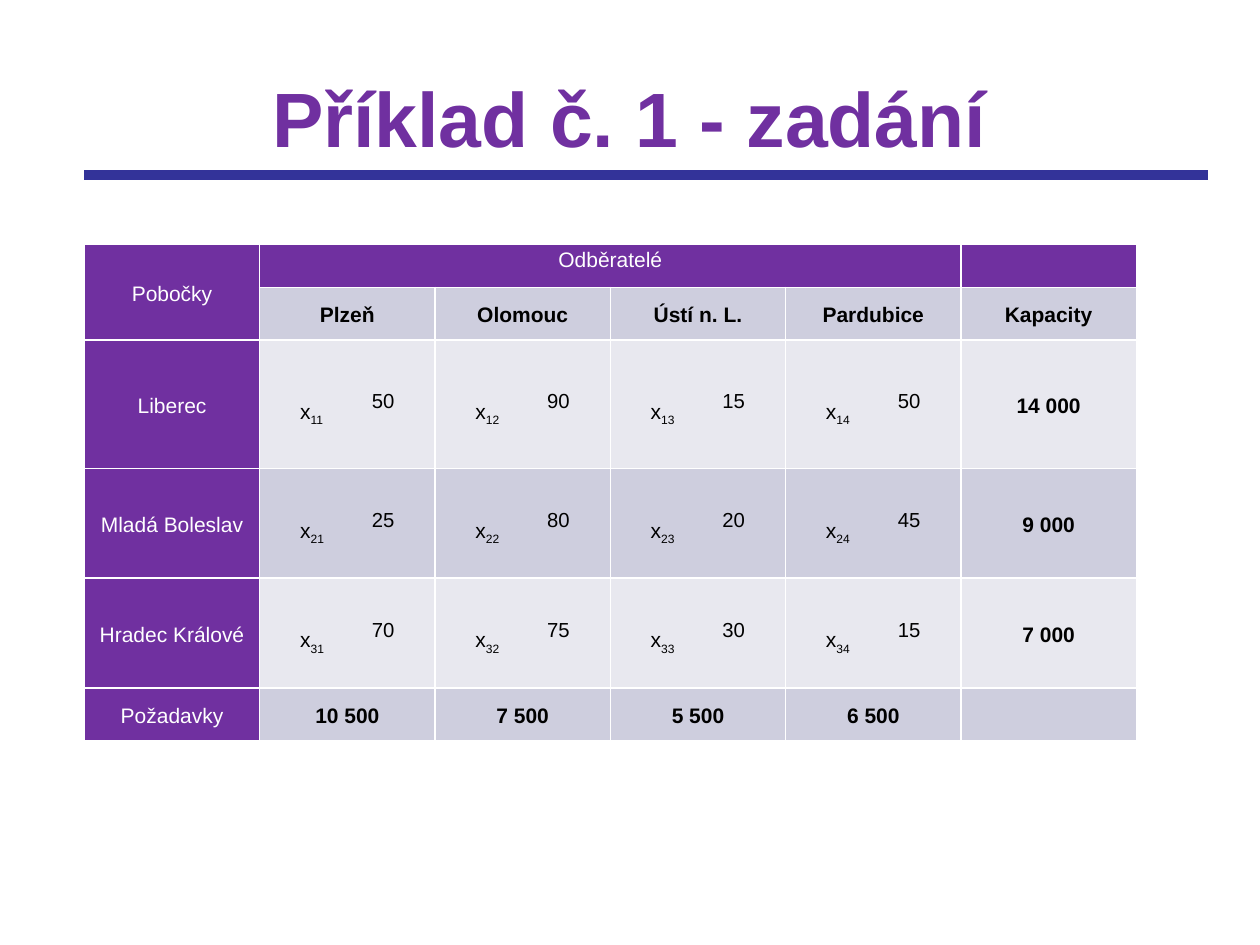
"""Build a slide that states a transportation problem as a table of branches and customers."""
from lxml.etree import SubElement
from pptx import Presentation
from pptx.dml.color import RGBColor
from pptx.enum.shapes import MSO_CONNECTOR
from pptx.enum.text import MSO_ANCHOR, PP_ALIGN
from pptx.oxml.ns import qn
from pptx.util import Inches, Pt

PURPLE, WHITE, BLACK = "7030A0", "FFFFFF", "000000"
BANDS = ["E8E8EF", "CECEDE"]


def color(value):
    return RGBColor.from_string(value)


def add_run(paragraph, text, size, text_color, bold=False, baseline=None):
    run = paragraph.add_run()
    run.text = text
    for name, value in {"name": "Arial", "size": Pt(size), "bold": bold}.items():
        setattr(run.font, name, value)
    run.font.color.rgb = color(text_color)
    if baseline:
        run.font._element.set("baseline", str(baseline * 1000))


presentation = Presentation()
presentation.slide_width, presentation.slide_height = Inches(10), Inches(7.5)
slide = presentation.slides.add_slide(presentation.slide_layouts[6])

title = slide.shapes.add_textbox(Inches(0.5), Inches(0.3), Inches(9), Inches(1.25))
title_format = {"word_wrap": True, "vertical_anchor": MSO_ANCHOR.MIDDLE}
for name, value in title_format.items():
    setattr(title.text_frame, name, value)
paragraph = title.text_frame.paragraphs[0]
paragraph.alignment = PP_ALIGN.CENTER
add_run(paragraph, "Příklad č. 1 - zadání", 44, PURPLE, True)

rule = slide.shapes.add_connector(
    MSO_CONNECTOR.STRAIGHT, Inches(0.67), Inches(1.39), Inches(9.59), Inches(1.39))
rule.line.color.rgb = color("333399")
rule.line.width = Pt(6)
SubElement(rule._element.spPr, qn("a:effectLst"))

rows = [
    ["Pobočky", "Odběratelé", "", "", "", ""],
    ["", "Plzeň", "Olomouc", "Ústí n. L.", "Pardubice", "Kapacity"],
    ["Liberec", 50, 90, 15, 50, "14 000"],
    ["Mladá Boleslav", 25, 80, 20, 45, "9 000"],
    ["Hradec Králové", 70, 75, 30, 15, "7 000"],
    ["Požadavky", "10 500", "7 500", "5 500", "6 500", ""],
]
row_heights = [0.34, 0.42, 1.02, 0.87, 0.87, 0.42]
table = slide.shapes.add_table(
    len(rows), len(rows[0]), Inches(0.67), Inches(1.94), Inches(8.35), Inches(3.94)).table
for name in ("first_row", "horz_banding"):
    setattr(table, name, False)
for column in table.columns:
    column.width = Inches(8.35 / 6)
for row, height in zip(table.rows, row_heights):
    row.height = Inches(height)
table.cell(0, 0).merge(table.cell(1, 0))
table.cell(0, 1).merge(table.cell(0, 4))

cell_format = {
    "margin_left": Inches(0.07), "margin_right": Inches(0.07),
    "margin_top": 0, "margin_bottom": 0, "vertical_anchor": MSO_ANCHOR.MIDDLE,
}
paragraph_format = {
    "alignment": PP_ALIGN.CENTER, "line_spacing": 1.15, "space_after": Pt(6),
}
for row_index, values in enumerate(rows):
    for column_index, value in enumerate(values):
        cell = table.cell(row_index, column_index)
        header = row_index == 0 or column_index == 0
        for name, setting in cell_format.items():
            setattr(cell, name, setting)
        properties = cell._tc.get_or_add_tcPr()
        for side in ("lnL", "lnR", "lnT", "lnB"):
            border = SubElement(properties, qn(f"a:{side}"), w=str(Pt(1)))
            SubElement(SubElement(border, qn("a:solidFill")), qn("a:srgbClr"), val=WHITE)
        cell.fill.solid()
        cell.fill.fore_color.rgb = color(PURPLE if header else BANDS[row_index % 2])
        paragraph = cell.text_frame.paragraphs[0]
        for name, setting in paragraph_format.items():
            setattr(paragraph, name, setting)
        if isinstance(value, int):
            cell.margin_left = Inches(0.32)
            paragraph.alignment = PP_ALIGN.LEFT
            tabs = SubElement(paragraph._p.get_or_add_pPr(), qn("a:tabLst"))
            SubElement(tabs, qn("a:tab"), pos=str(Inches(0.57)), algn="l")
            add_run(paragraph, "x", 12, BLACK)
            add_run(paragraph, f"{row_index - 1}{column_index}\t", 12, BLACK, baseline=-25)
            add_run(paragraph, str(value), 20, BLACK, baseline=30)
        elif value:
            add_run(paragraph, value, 12, WHITE if header else BLACK, not header)
table.cell(0, 1).vertical_anchor = MSO_ANCHOR.TOP

presentation.save("out.pptx")
